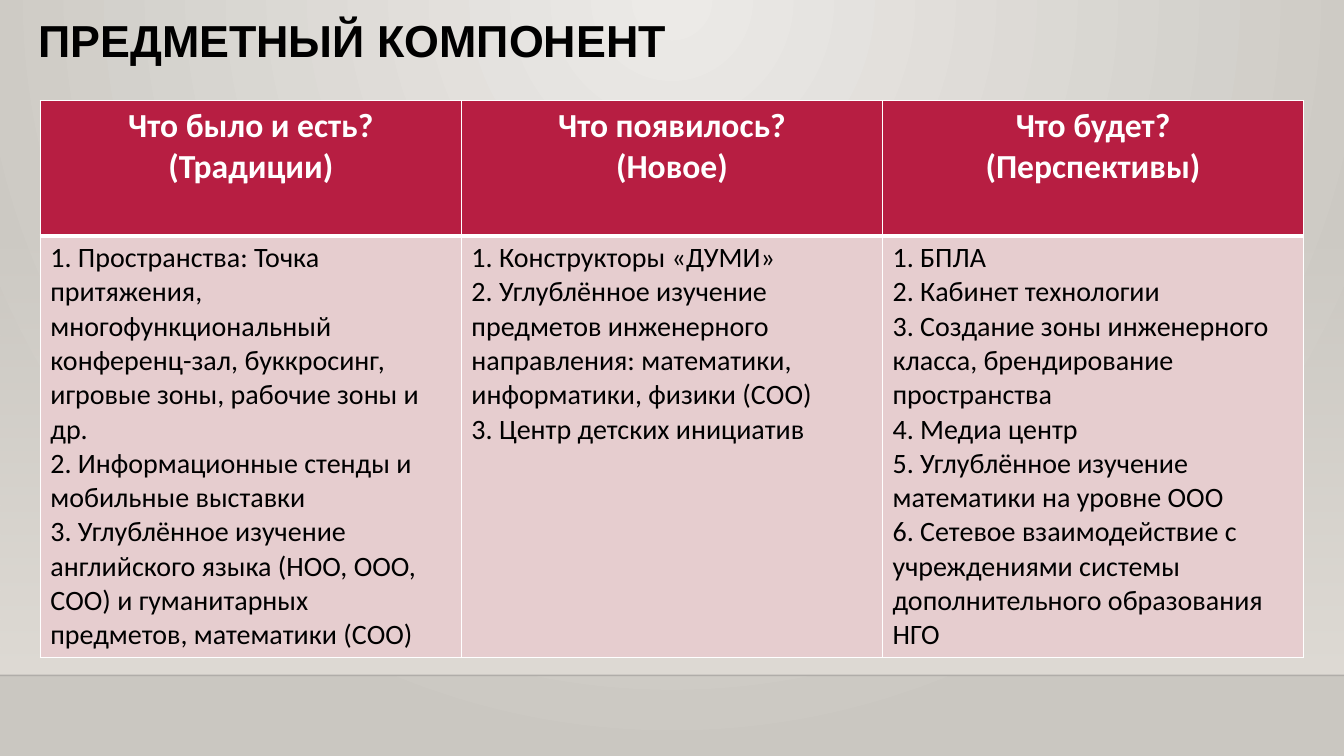
from dataclasses import dataclass

from lxml import etree
from pptx import Presentation
from pptx.dml.color import RGBColor
from pptx.enum import shapes, text
from pptx.oxml import ns
from pptx.util import Pt


@dataclass(frozen=True)
class Theme:
    crimson: str = "B71E42"
    pink: str = "E6CDCF"
    white: str = "FFFFFF"
    black: str = "000000"
    horizon: str = "000001"
    wall_light: str = "ECEAE7"
    wall_dark: str = "CAC7C1"
    haze: str = "DFDBD5"
    title_font: str = "Arial"
    table_font: str = "Calibri"
    title_size: int = 32
    header_size: int = 24
    body_size: int = 20


THEME = Theme()
SLIDE_WIDTH, SLIDE_HEIGHT = 960, 540
HORIZON_TOP = 482.4
ROW_HEIGHTS = (96.5, 301)
COLUMN_WIDTH = 300.8

COLUMNS = [
    (
        ["Что было и есть?", "(Традиции)"],
        [
            "1. Пространства: Точка притяжения, многофункциональный "
            "конференц-зал, буккросинг, игровые зоны, рабочие зоны и др.",
            "2. Информационные стенды и мобильные выставки",
            "3. Углублённое изучение английского языка (НОО, ООО, СОО) "
            "и гуманитарных предметов, математики (СОО)",
        ],
    ),
    (
        ["Что появилось?", "(Новое)"],
        [
            "1. Конструкторы «ДУМИ»",
            "2. Углублённое изучение предметов инженерного направления: "
            "математики, информатики, физики (СОО)",
            "3. Центр детских инициатив",
        ],
    ),
    (
        ["Что будет?", "(Перспективы)"],
        [
            "1. БПЛА",
            "2. Кабинет технологии",
            "3. Создание зоны инженерного класса, брендирование пространства",
            "4. Медиа центр",
            "5. Углублённое изучение математики на уровне ООО",
            "6. Сетевое взаимодействие с учреждениями системы "
            "дополнительного образования НГО",
        ],
    ),
]


def add_child(parent, tag, **attributes):
    return etree.SubElement(parent, ns.qn(tag), attributes)


def set_gradient(fill, colors):
    fill.gradient()
    for stop, color in zip(fill.gradient_stops, colors):
        stop.color.rgb = RGBColor.from_string(color)


def set_alpha(color_element, percent):
    add_child(color_element, "a:alpha", val=str(percent * 1000))


def paint_background(slide):
    """Radial gradient that spreads from the middle of the top edge."""
    set_gradient(slide.background.fill, (THEME.wall_light, THEME.wall_dark))
    gradient = slide.element.find(".//" + ns.qn("a:gradFill"))
    gradient.remove(gradient.find(ns.qn("a:lin")))
    circle = add_child(gradient, "a:path", path="circle")
    add_child(circle, "a:fillToRect", l="43000", t="0", r="43000", b="100000")


def add_haze(slide, top, bottom):
    """Band that fades in downwards."""
    haze = slide.shapes.add_shape(
        shapes.MSO_SHAPE.RECTANGLE, 0, Pt(top), Pt(SLIDE_WIDTH), Pt(bottom - top)
    )
    haze.shadow.inherit = False
    haze.line.fill.background()
    set_gradient(haze.fill, (THEME.haze, THEME.haze))
    haze.fill.gradient_angle = 270
    set_alpha(haze.element.spPr.find(".//" + ns.qn("a:srgbClr")), 0)


def add_horizon(slide, top):
    line = slide.shapes.add_connector(
        shapes.MSO_CONNECTOR.STRAIGHT, 0, Pt(top), Pt(SLIDE_WIDTH), Pt(top)
    )
    line.line.width = Pt(1)
    line.line.color.rgb = RGBColor.from_string(THEME.horizon)
    properties = line.element.spPr
    set_alpha(properties.find(".//" + ns.qn("a:srgbClr")), 20)
    add_child(properties, "a:effectLst")


def format_paragraph(paragraph, font, size, color, bold):
    paragraph.font.size = Pt(size)
    for run in paragraph.runs:
        run.font.name = font
        run.font.size = Pt(size)
        run.font.bold = bold
        run.font.color.rgb = RGBColor.from_string(color)


def add_title(slide, title):
    box = slide.shapes.add_textbox(Pt(20.2), Pt(8.6), Pt(756), Pt(82.8))
    frame = box.text_frame
    frame.word_wrap = True
    frame.margin_top = Pt(4.5)
    frame.text = title
    paragraph = frame.paragraphs[0]
    paragraph.line_spacing = 0.9
    format_paragraph(paragraph, THEME.title_font, THEME.title_size, THEME.black, True)


def set_borders(cell, top, bottom):
    properties = cell._tc.get_or_add_tcPr()
    widths = {"a:lnL": 1, "a:lnR": 1, "a:lnT": top, "a:lnB": bottom}
    for tag, width in widths.items():
        border = add_child(properties, tag, w=str(Pt(width)))
        add_child(add_child(border, "a:solidFill"), "a:srgbClr", val=THEME.white)


def fill_cell(cell, lines, is_header):
    set_borders(cell, top=1 if is_header else 3, bottom=3 if is_header else 1)
    cell.fill.solid()
    cell.fill.fore_color.rgb = RGBColor.from_string(
        THEME.crimson if is_header else THEME.pink
    )
    cell.text_frame.text = "\n".join(lines)
    size = THEME.header_size if is_header else THEME.body_size
    color = THEME.white if is_header else THEME.black
    for paragraph in cell.text_frame.paragraphs:
        paragraph.alignment = (
            text.PP_ALIGN.CENTER if is_header else text.PP_ALIGN.LEFT
        )
        format_paragraph(paragraph, THEME.table_font, size, color, is_header)


def add_comparison(slide, columns):
    table = slide.shapes.add_table(
        len(ROW_HEIGHTS), len(columns), Pt(28.8), Pt(72),
        Pt(COLUMN_WIDTH * len(columns)), Pt(sum(ROW_HEIGHTS)),
    ).table
    table.horz_banding = False
    for row, height in zip(table.rows, ROW_HEIGHTS):
        row.height = Pt(height)
    for index, (heading, items) in enumerate(columns):
        table.columns[index].width = Pt(COLUMN_WIDTH)
        fill_cell(table.cell(0, index), heading, True)
        fill_cell(table.cell(1, index), items, False)


def main():
    presentation = Presentation()
    presentation.slide_width = Pt(SLIDE_WIDTH)
    presentation.slide_height = Pt(SLIDE_HEIGHT)
    slide = presentation.slides.add_slide(presentation.slide_layouts[6])
    paint_background(slide)
    add_haze(slide, 159, HORIZON_TOP)
    add_horizon(slide, HORIZON_TOP)
    add_title(slide, "ПРЕДМЕТНЫЙ КОМПОНЕНТ")
    add_comparison(slide, COLUMNS)
    presentation.save("out.pptx")


if __name__ == "__main__":
    main()
